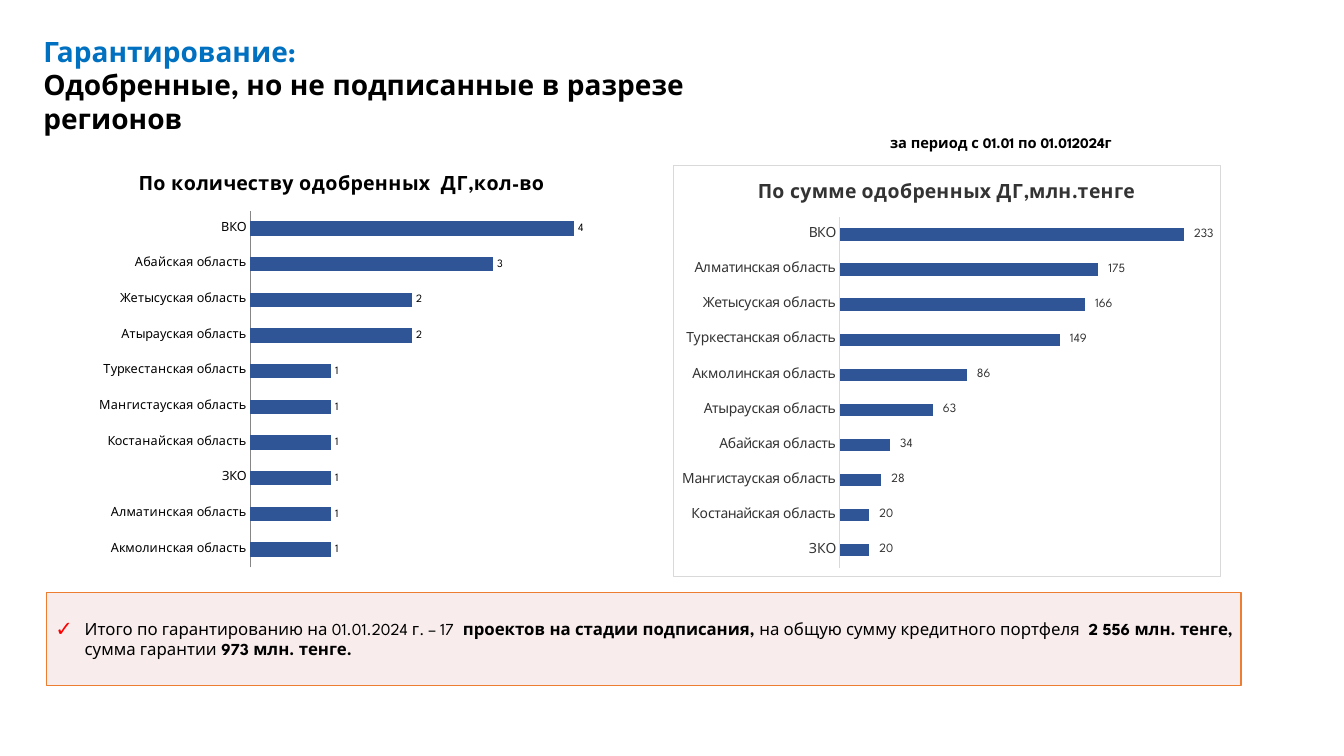
from lxml import etree
from pptx import Presentation
from pptx.chart.data import CategoryChartData
from pptx.dml.color import RGBColor
from pptx.enum.chart import XL_CHART_TYPE, XL_LABEL_POSITION, XL_TICK_MARK
from pptx.enum.shapes import MSO_SHAPE
from pptx.enum.text import MSO_ANCHOR, PP_ALIGN
from pptx.oxml import parse_xml
from pptx.oxml.ns import nsdecls, qn
from pptx.util import Inches, Pt

BAR = XL_CHART_TYPE.BAR_CLUSTERED
OUTSIDE_END = XL_LABEL_POSITION.OUTSIDE_END
NO_TICK = XL_TICK_MARK.NONE
RECTANGLE = MSO_SHAPE.RECTANGLE
TOP, MIDDLE = MSO_ANCHOR.TOP, MSO_ANCHOR.MIDDLE
LEFT = PP_ALIGN.LEFT

FONT = "League Spartan"
BULLET_FONT = "Calibri"
BLACK, GREY, BAR_BLUE = "000000", "333333", "2F5597"
AMOUNT_FORMAT = r'_-* #\ ##0_р_._-;\-* #\ ##0_р_._-;_-* "-"'

COUNTS = [
    ("Акмолинская область", 1), ("Алматинская область", 1), ("ЗКО", 1),
    ("Костанайская область", 1), ("Мангистауская область", 1),
    ("Туркестанская область", 1), ("Атырауская область", 2),
    ("Жетысуская область", 2), ("Абайская область", 3), ("ВКО", 4),
]
AMOUNTS = [
    ("ЗКО", 20), ("Костанайская область", 20), ("Мангистауская область", 28),
    ("Абайская область", 34), ("Атырауская область", 63),
    ("Акмолинская область", 86), ("Туркестанская область", 149),
    ("Жетысуская область", 166), ("Алматинская область", 175), ("ВКО", 233),
]
SUMMARY = [
    ("Итого по гарантированию на 01.01.2024 г. – 17 ", False),
    (" проектов на стадии подписания, ", True),
    ("на общую сумму кредитного портфеля  ", False),
    ("2 556 млн. тенге, ", True),
    ("сумма гарантии", False),
    (" 973 млн. тенге.", True),
]


def color(value):
    """Turn a hex string into a colour."""
    return RGBColor.from_string(value)


def style_font(font, size, hue=BLACK, bold=False):
    """Set the typeface, size, colour and weight of a font."""
    font.name = FONT
    font.size = Pt(size)
    font.bold = bold
    font.color.rgb = color(hue)


def add_span(para, text, size, hue=BLACK, bold=False):
    """Add one formatted run to a paragraph."""
    span = para.add_run()
    span.text = text
    style_font(span.font, size, hue, bold)


def add_title(page):
    """Fill the title placeholder with a blue and a black line."""
    title = page.shapes.title
    title.left, title.top = Inches(0.33), Inches(0.29)
    title.width, title.height = Inches(7.87), Inches(1.11)
    frame = title.text_frame
    frame.word_wrap = True
    frame.vertical_anchor = TOP
    para = frame.paragraphs[0]
    para.alignment = LEFT
    para.line_spacing = 1.0
    add_span(para, "Гарантирование: ", 20, "0070C0", True)
    para.add_line_break()
    add_span(para, "Одобренные, но не подписанные в разрезе регионов", 20, BLACK, True)


def add_period(page):
    """Add the reporting period above the right chart."""
    box = page.shapes.add_textbox(Inches(8.73), Inches(1.28), Inches(2.54), Inches(0.28))
    box.text_frame.word_wrap = False
    add_span(box.text_frame.paragraphs[0], "за период с 01.01 по 01.012024г", 10.5, BLACK, True)


def add_check_bullet(para):
    """Give a paragraph a hanging red check mark."""
    props = para._p.get_or_add_pPr()
    props.set("marL", str(Inches(0.3)))
    props.set("indent", str(Inches(-0.29)))
    bullet_color = etree.SubElement(props, qn("a:buClr"))
    etree.SubElement(bullet_color, qn("a:srgbClr"), val="FF0000")
    etree.SubElement(props, qn("a:buSzPct"), val="125000")
    etree.SubElement(props, qn("a:buFont"), typeface=BULLET_FONT)
    etree.SubElement(props, qn("a:buChar"), char="✓")


def add_summary(page):
    """Add the tinted panel with the totals."""
    panel = page.shapes.add_shape(
        RECTANGLE, Inches(0.46), Inches(5.88), Inches(11.85), Inches(0.92))
    panel.shadow.inherit = False
    panel.fill.solid()
    panel.fill.fore_color.rgb = color("F2DCDB")
    fill_color = panel.element.spPr.find(qn("a:solidFill"))[0]
    etree.SubElement(fill_color, qn("a:alpha"), val="50000")
    panel.line.color.rgb = color("ED7D31")
    panel.line.width = Pt(1)
    frame = panel.text_frame
    frame.word_wrap = True
    frame.vertical_anchor = MIDDLE
    frame.margin_left = frame.margin_right = Inches(0.08)
    frame.margin_top = frame.margin_bottom = Inches(0.04)
    para = frame.paragraphs[0]
    para.alignment = LEFT
    add_check_bullet(para)
    para.space_after = Pt(6)
    for text, bold in SUMMARY:
        add_span(para, text, 12, BLACK, bold)


def place_plot(chart, area):
    """Fix the inner plot area as fractions of the chart."""
    plot_area = chart.element.find(".//" + qn("c:plotArea"))
    for layout in plot_area.findall(qn("c:layout")):
        plot_area.remove(layout)
    sizes = "".join(f'<c:{key} val="{value}"/>' for key, value in zip("xywh", area))
    plot_area.insert(0, parse_xml(
        f'<c:layout {nsdecls("c")}><c:manualLayout><c:layoutTarget val="inner"/>'
        f'<c:xMode val="edge"/><c:yMode val="edge"/>{sizes}'
        '</c:manualLayout></c:layout>'))


def frame_chart(chart):
    """Give the chart a white background and a thin grey border."""
    chart.element.find(qn("c:chart")).addnext(parse_xml(
        f'<c:spPr {nsdecls("c", "a")}>'
        '<a:solidFill><a:srgbClr val="FFFFFF"/></a:solidFill>'
        f'<a:ln w="{Pt(0.75)}"><a:solidFill><a:srgbClr val="D9D9D9"/></a:solidFill></a:ln>'
        '</c:spPr>'))


def add_region_chart(page, place, title, rows, area, maximum, gap, hue,
                     axis_size, label_size, axis_line, number_format="General"):
    """Add a bar chart of values by region."""
    data = CategoryChartData()
    data.categories = [region for region, _ in rows]
    data.add_series("Series 1", [value for _, value in rows])
    chart = page.shapes.add_chart(BAR, *map(Inches, place), data).chart
    style_font(chart.font, 10, hue)
    chart.has_legend = False
    chart.has_title = True
    add_span(chart.chart_title.text_frame.paragraphs[0], title, 14, hue, True)
    chart.chart_title.include_in_layout = False

    plot = chart.plots[0]
    plot.gap_width = gap
    plot.vary_by_categories = False
    bars = plot.series[0]
    bars.format.fill.solid()
    bars.format.fill.fore_color.rgb = color(BAR_BLUE)
    labels = bars.data_labels
    labels.show_value = True
    labels.position = OUTSIDE_END
    labels.number_format = number_format
    labels.number_format_is_linked = False
    style_font(labels.font, label_size, hue)

    regions = chart.category_axis
    regions.major_tick_mark = regions.minor_tick_mark = NO_TICK
    regions.format.line.color.rgb = color(axis_line)
    regions.format.line.width = Pt(0.75)
    style_font(regions.tick_labels.font, axis_size, hue)
    values = chart.value_axis
    values.minimum_scale, values.maximum_scale = 0, maximum
    values.has_major_gridlines = False
    values.visible = False
    place_plot(chart, area)
    return chart


def main():
    """Build the slide and save it."""
    deck = Presentation()
    deck.slide_width, deck.slide_height = Inches(13.33), Inches(7.5)
    page = deck.slides.add_slide(deck.slide_layouts[5])
    add_title(page)
    add_period(page)
    add_summary(page)
    add_region_chart(
        page, (0.46, 1.56, 5.86, 4.24), "По количеству одобренных  ДГ,кол-во", COUNTS,
        (0.345, 0.125, 0.617, 0.835), 4.5, 150, BLACK, 9, 8, "868686")
    amounts = add_region_chart(
        page, (6.67, 1.64, 5.49, 4.08), "По сумме одобренных ДГ,млн.тенге", AMOUNTS,
        (0.305, 0.125, 0.675, 0.855), 250, 182, GREY, 10, 9, "D9D9D9", AMOUNT_FORMAT)
    frame_chart(amounts)
    deck.save("out.pptx")


if __name__ == "__main__":
    main()
